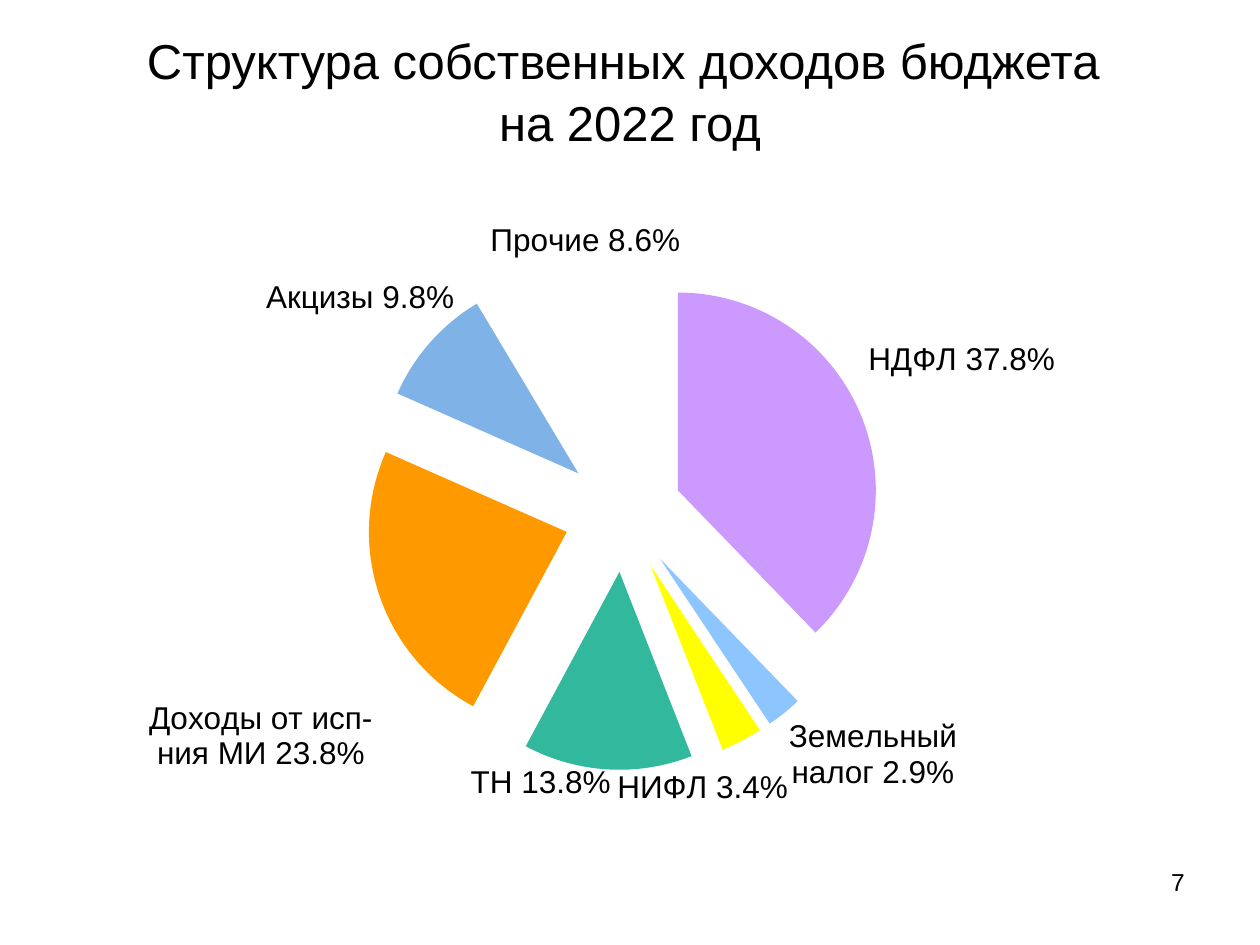
from pptx import Presentation
from pptx.chart.data import CategoryChartData
from pptx.dml.color import RGBColor
from pptx.enum.chart import XL_CHART_TYPE
from pptx.enum.text import MSO_ANCHOR, PP_ALIGN
from pptx.oxml import parse_xml
from pptx.oxml.ns import nsdecls, qn
from pptx.util import Pt

FONT = "Arial"
BLACK = "000000"
TITLE_LINES = ["Структура собственных доходов бюджета ", "на 2022 год"]
PAGE_NUMBER = "7"

# category, share in percent, colour, label shift from its default place (x, y in points)
INCOMES = [
    ("НДФЛ", 37.8, "CC99FF", (0, -21)),
    ("Земельный налог", 2.9, "8DC6FF", (0, 0)),
    ("НИФЛ", 3.4, "FFFF00", (-73, 13)),
    ("ТН", 13.8, "32B89C", (-38, -7)),
    ("Доходы от исп-ния МИ", 23.8, "FF9900", (0, 58)),
    ("Акцизы", 9.8, "7FB3E7", (17, -13)),
    ("Прочие", 8.6, "FFFFFF", (73, 0)),
]
CHART_LEFT, CHART_TOP, CHART_WIDTH, CHART_HEIGHT = 36, 114, 648, 362
PIE_LEFT, PIE_TOP, PIE_SIZE = 173, 32, 294
EXPLOSION = 30


def rgb(colour):
    return RGBColor.from_string(colour)


def style_font(font, size):
    font.name = FONT
    font.size = Pt(size)
    font.color.rgb = rgb(BLACK)


def manual_layout(x, y, extra=""):
    """Layout XML with x and y in points, as fractions of the chart."""
    return (f'<c:manualLayout>{extra}<c:x val="{x / CHART_WIDTH:.4f}"/>'
            f'<c:y val="{y / CHART_HEIGHT:.4f}"/>')


def label_settings():
    flags = [("LegendKey", 0), ("Val", 0), ("CatName", 1), ("SerName", 0),
             ("Percent", 1), ("BubbleSize", 0)]
    return ('<c:numFmt formatCode="0.0%" sourceLinked="0"/><c:dLblPos val="outEnd"/>'
            + "".join(f'<c:show{name} val="{on}"/>' for name, on in flags)
            + "<c:separator> </c:separator>")


def add_labels(series):
    labels = "".join(
        f'<c:dLbl><c:idx val="{i}"/><c:layout>{manual_layout(*shift)}</c:manualLayout></c:layout>'
        f"{label_settings()}</c:dLbl>"
        for i, (_, _, _, shift) in enumerate(INCOMES))
    series.find(qn("c:cat")).addprevious(parse_xml(
        f'<c:dLbls {nsdecls("c")}>{labels}{label_settings()}'
        '<c:showLeaderLines val="0"/></c:dLbls>'))


def place_pie(plot_area):
    for old_layout in plot_area.findall(qn("c:layout")):
        plot_area.remove(old_layout)
    modes = ('<c:layoutTarget val="inner"/><c:xMode val="edge"/><c:yMode val="edge"/>')
    plot_area.insert(0, parse_xml(
        f'<c:layout {nsdecls("c")}>{manual_layout(PIE_LEFT, PIE_TOP, modes)}'
        f'<c:w val="{PIE_SIZE / CHART_WIDTH:.4f}"/><c:h val="{PIE_SIZE / CHART_HEIGHT:.4f}"/>'
        "</c:manualLayout></c:layout>"))


def add_title(slide):
    title = slide.shapes.title
    title.left, title.top, title.width, title.height = Pt(36), Pt(24), Pt(648), Pt(54)
    title.text_frame.vertical_anchor = MSO_ANCHOR.MIDDLE
    paragraph = title.text_frame.paragraphs[0]
    paragraph.alignment = PP_ALIGN.CENTER
    paragraph.line_spacing = 1.05
    for i, line in enumerate(TITLE_LINES):
        if i:
            paragraph.add_line_break()
        run = paragraph.add_run()
        run.text = line
        style_font(run.font, 28)


def add_pie(slide):
    incomes = CategoryChartData(number_format="0.0")
    incomes.categories = [name for name, *_ in INCOMES]
    incomes.add_series("Series 1", [share for _, share, *_ in INCOMES])
    chart = slide.shapes.add_chart(
        XL_CHART_TYPE.PIE, Pt(CHART_LEFT), Pt(CHART_TOP),
        Pt(CHART_WIDTH), Pt(CHART_HEIGHT), incomes).chart
    chart.has_legend = False
    chart.has_title = False
    style_font(chart.font, 18)
    plot = chart.plots[0]
    plot.vary_by_categories = True
    pie = plot.series[0]
    for i, (_, _, colour, _) in enumerate(INCOMES):
        slice_format = pie.points[i].format
        slice_format.fill.solid()
        slice_format.fill.fore_color.rgb = rgb(colour)
        slice_format.line.fill.background()
    series = pie._element
    series.find(qn("c:dPt")).addprevious(
        parse_xml(f'<c:explosion {nsdecls("c")} val="{EXPLOSION}"/>'))
    add_labels(series)
    place_pie(chart._chartSpace.chart.plotArea)


def add_page_number(slide):
    frame = slide.shapes.add_textbox(Pt(516), Pt(492), Pt(168), Pt(37.5)).text_frame
    frame.word_wrap = True
    paragraph = frame.paragraphs[0]
    paragraph.alignment = PP_ALIGN.RIGHT
    run = paragraph.add_run()
    run.text = PAGE_NUMBER
    style_font(run.font, 14)


def main():
    presentation = Presentation()
    presentation.slide_width, presentation.slide_height = Pt(720), Pt(540)
    slide = presentation.slides.add_slide(presentation.slide_layouts[5])
    add_title(slide)
    add_pie(slide)
    add_page_number(slide)
    presentation.save("out.pptx")


if __name__ == "__main__":
    main()
